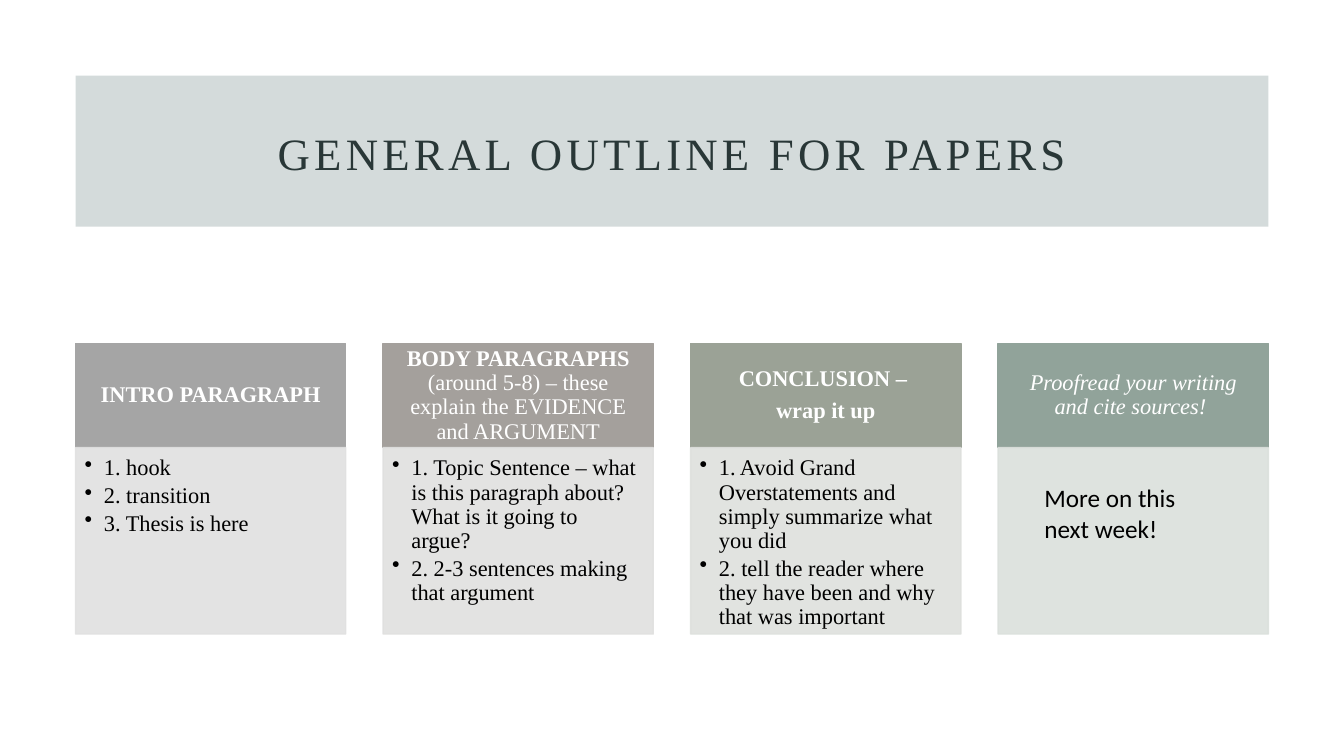
import pptx
import pptx.util
import pptx.dml.color
import pptx.enum.shapes
import pptx.enum.text
from dataclasses import dataclass
from lxml import etree
from pptx.oxml.ns import qn

TITLE = "GENERAL OUTLINE FOR PAPERS"
# Each heading is a list of paragraphs; each paragraph is a list of (text, style) runs.
COLUMNS = [
    {"heading": [[("INTRO PARAGRAPH", "bold")]],
     "points": ["1. hook", "2. transition", "3. Thesis is here"],
     "header_fill": "A5A5A5", "body_fill": "E1E1E1"},
    {"heading": [[("BODY PARAGRAPHS ", "bold"),
                  ("(around 5-8) – these explain the EVIDENCE and ARGUMENT", "")]],
     "points": ["1. Topic Sentence – what is this paragraph about? What is it going to argue?",
                "2. 2-3 sentences making that argument"],
     "header_fill": "A4A09C", "body_fill": "E0E0DF"},
    {"heading": [[("CONCLUSION – ", "bold")], [("wrap it up", "bold")]],
     "points": ["1. Avoid Grand Overstatements and simply summarize what you did",
                "2. tell the reader where they have been and why that was important"],
     "header_fill": "9BA296", "body_fill": "DEE0DD"},
    {"heading": [[("Proofread your writing and cite sources! ", "italic")]],
     "points": [],
     "header_fill": "91A39A", "body_fill": "DBE0DC"},
]
CLOSING_NOTE = "More on this next week!"


@dataclass(frozen=True)
class Theme:
    serif: str = "Times New Roman"
    sans: str = "Calibri"
    band: str = "557272"
    title: str = "293737"
    light: str = "FFFFFF"
    dark: str = "000000"
    title_size: int = 32
    text_size: int = 16
    note_size: int = 18


THEME = Theme()
EMU_PER_PX = 9144  # 100 px to the inch
SLIDE_SIZE = (1333, 750)
MARGIN, CONTENT_WIDTH = 75, 1183
COLUMN_WIDTH = 268
HEADER_TOP, HEADER_HEIGHT = 341, 103
BODY_HEIGHT = 185
BULLET_INDENT = 19
CENTER = pptx.enum.text.PP_ALIGN.CENTER
LEFT = pptx.enum.text.PP_ALIGN.LEFT
MIDDLE = pptx.enum.text.MSO_ANCHOR.MIDDLE
TOP = pptx.enum.text.MSO_ANCHOR.TOP


def px(length):
    return pptx.util.Emu(round(length * EMU_PER_PX))


def rgb(color):
    return pptx.dml.color.RGBColor.from_string(color)


def set_solid(fill, color, opacity):
    fill.solid()
    fill.fore_color.rgb = rgb(color)
    if opacity < 100:
        for color_element in fill._xPr.iter(qn("a:srgbClr")):
            if color_element.find(qn("a:alpha")) is None:
                etree.SubElement(color_element, qn("a:alpha"), val=str(opacity * 1000))


def add_block(slide, left, top, width, height, color, opacity=100, outlined=True):
    shape = slide.shapes.add_shape(pptx.enum.shapes.MSO_SHAPE.RECTANGLE,
                                   px(left), px(top), px(width), px(height))
    shape.shadow.inherit = False
    set_solid(shape.fill, color, opacity)
    if outlined:
        shape.line.width = pptx.util.Pt(1)
        set_solid(shape.line.fill, color, opacity)
    else:
        shape.line.fill.background()
    return shape


def write_text(shape, paragraphs, *, size, color, font=THEME.serif, align=LEFT, anchor=TOP,
               insets=(10, 5, 10, 5), line_spacing=0.9, space_after=0,
               bulleted=False, tracking=0):
    """Fill a shape with paragraphs, each a list of (text, style) runs."""
    frame = shape.text_frame
    frame.word_wrap = True
    frame.vertical_anchor = anchor
    frame.margin_left, frame.margin_top, frame.margin_right, frame.margin_bottom = map(px, insets)
    for index, runs in enumerate(paragraphs):
        paragraph = frame.add_paragraph() if index else frame.paragraphs[0]
        paragraph.alignment = align
        paragraph.line_spacing = line_spacing
        paragraph.space_before = pptx.util.Pt(0)
        paragraph.space_after = pptx.util.Pt(space_after)
        if bulleted:
            paragraph.level = 1
            properties = paragraph._p.get_or_add_pPr()
            properties.set("marL", str(px(BULLET_INDENT)))
            properties.set("indent", str(-px(BULLET_INDENT)))
            etree.SubElement(properties, qn("a:buChar"), char="•")
        for text, style in runs:
            run = paragraph.add_run()
            run.text = text
            run.font.name = font
            run.font.size = pptx.util.Pt(size)
            run.font.color.rgb = rgb(color)
            run.font.bold = style == "bold"
            run.font.italic = style == "italic"
            if tracking:
                run._r.get_or_add_rPr().set("spc", str(tracking * 100))


def add_title(slide):
    title = slide.shapes.title
    band = add_block(slide, MARGIN, 75, CONTENT_WIDTH, 150, THEME.band, opacity=25, outlined=False)
    title._element.addprevious(band._element)
    title.left, title.top, title.width, title.height = map(px, (153, 104, 1027, 102))
    write_text(title, [[(TITLE, "")]], size=THEME.title_size, color=THEME.title,
               align=CENTER, anchor=MIDDLE, tracking=3)


def add_column(slide, left, column):
    header = add_block(slide, left, HEADER_TOP, COLUMN_WIDTH, HEADER_HEIGHT, column["header_fill"])
    write_text(header, column["heading"], size=THEME.text_size, color=THEME.light, align=CENTER,
               anchor=MIDDLE, insets=(12, 7, 12, 7), space_after=5.6)
    body = add_block(slide, left, HEADER_TOP + HEADER_HEIGHT, COLUMN_WIDTH, BODY_HEIGHT,
                     column["body_fill"], opacity=90)
    if column["points"]:
        write_text(body, [[(point, "")] for point in column["points"]], size=THEME.text_size,
                   color=THEME.dark, insets=(9, 9, 12, 14), space_after=2.4, bulleted=True)


def main():
    presentation = pptx.Presentation()
    presentation.slide_width, presentation.slide_height = map(px, SLIDE_SIZE)
    slide = presentation.slides.add_slide(presentation.slide_layouts[5])
    add_title(slide)
    column_step = (CONTENT_WIDTH - COLUMN_WIDTH) / (len(COLUMNS) - 1)
    for index, column in enumerate(COLUMNS):
        add_column(slide, MARGIN + index * column_step, column)
    note = slide.shapes.add_textbox(px(1026), px(474), px(174), px(71))
    write_text(note, [[(CLOSING_NOTE, "")]], size=THEME.note_size, color=THEME.dark,
               font=THEME.sans, line_spacing=1.0)
    presentation.save("out.pptx")


if __name__ == "__main__":
    main()
